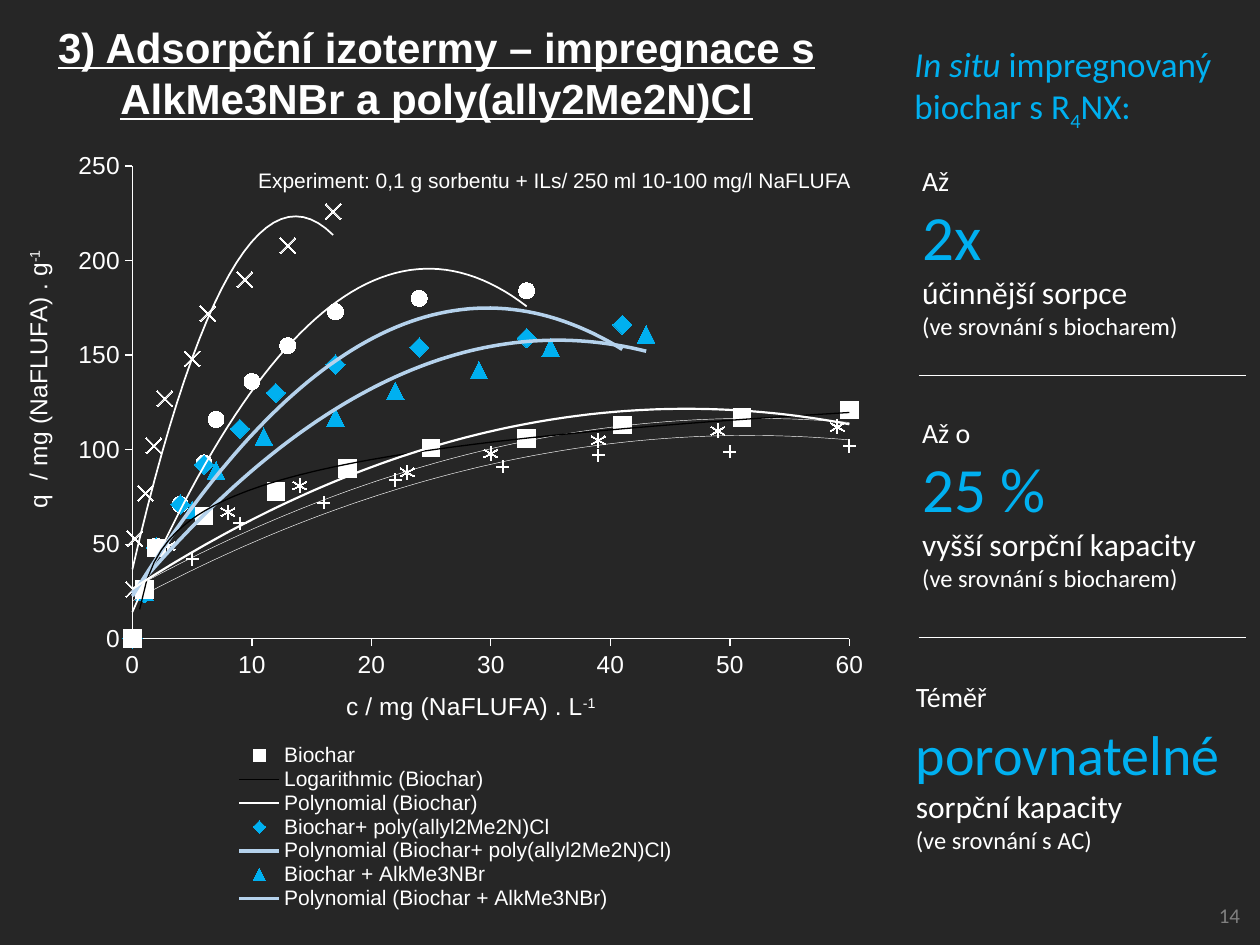
from lxml import etree
from pptx import Presentation, util as u
from pptx.chart.data import XyChartData
from pptx.dml.color import RGBColor
from pptx.enum import chart as ch, shapes, text
from pptx.oxml import parse_xml
from pptx.oxml.ns import nsdecls, qn

COLORS = {"back": "262626", "text": "FFFFFF", "accent": "00B0F0",
          "trend": "B5D2EC", "log": "000000", "number": "808080"}

# name (empty if not in the legend), x, y, marker, its size and colour,
# trendlines (type, colour, width)
SORBENTS = [
    ("Biochar", [0, 1, 2, 6, 12, 18, 25, 33, 41, 51, 60],
     [0, 26, 48, 65, 78, 90, 101, 106, 113, 117, 121],
     "SQUARE", 10, "text", [("log", "log", 0.75), ("poly", "text", 1.25)]),
    ("Biochar+ poly(allyl2Me2N)Cl", [0, 1, 2, 4, 6, 9, 12, 17, 24, 33, 41],
     [0, 24, 48, 71, 92, 111, 130, 145, 154, 159, 166],
     "DIAMOND", 11, "accent", [("poly", "trend", 2)]),
    ("Biochar + AlkMe3NBr", [0, 1, 2, 5, 7, 11, 17, 22, 29, 35, 43],
     [0, 25, 49, 68, 89, 107, 117, 131, 142, 154, 161],
     "TRIANGLE", 10, "accent", [("poly", "trend", 2)]),
    ("", [0, 0.1, 0.2, 1.1, 1.8, 2.7, 5, 6.3, 9.4, 13, 16.8],
     [0, 26, 53, 77, 102, 127, 148, 172, 190, 208, 226],
     "X", 9, "text", [("poly", "text", 1)]),
    ("", [0, 1, 2, 4, 6, 7, 10, 13, 17, 24, 33],
     [0, 24, 49, 71, 93, 116, 136, 155, 173, 180, 184],
     "CIRCLE", 9, "text", [("poly", "text", 1)]),
    ("", [0, 1, 3, 8, 14, 23, 30, 39, 49, 59, 71],
     [0, 28, 49, 67, 81, 88, 98, 105, 110, 112, 111],
     "STAR", 8, "text", [("poly", "text", 0.25)]),
    ("", [0, 1, 5, 9, 16, 22, 31, 39, 50, 60, 70],
     [0, 25, 42, 61, 72, 84, 91, 97, 99, 102, 104],
     "PLUS", 7, "text", [("poly", "text", 0.25)]),
]

# left, top, width, height, intro, highlight, its size, statement, comparison
FINDINGS = [
    (7.22, 1.25, 2.99, 1.51, "Až", "2x", 36, "účinnější sorpce", "(ve srovnání s biocharem)"),
    (7.22, 3.25, 2.81, 1.51, "Až o", "25 %", 36, "vyšší sorpční kapacity",
     "(ve srovnání s biocharem)"),
    (7.17, 5.34, 2.94, 1.51, "Téměř", "porovnatelné", 32, "sorpční kapacity",
     "(ve srovnání s AC)"),
]


def rgb(name):
    return RGBColor.from_string(COLORS[name])


def add_run(paragraph, words, size, color="text", font="Calibri", bold=False,
            italic=False, underline=False, baseline=0):
    run = paragraph.add_run()
    run.text = words
    run.font.size, run.font.name = u.Pt(size), font
    run.font.bold, run.font.italic, run.font.underline = bold, italic, underline
    run.font.color.rgb = rgb(color)
    if baseline:
        run.font._element.set("baseline", str(baseline * 1000))


def add_frame(slide, left, top, width, height):
    frame = slide.shapes.add_textbox(*map(u.Inches, (left, top, width, height))).text_frame
    frame.word_wrap = True
    return frame


def add_title(slide):
    title = slide.shapes.title
    title.left, title.top, title.width, title.height = map(u.Inches, (0.14, 0.12, 6.65, 0.91))
    frame = title.text_frame
    frame.auto_size = text.MSO_AUTO_SIZE.NONE
    frame.vertical_anchor = text.MSO_ANCHOR.TOP
    heading = frame.paragraphs[0]
    heading.alignment = text.PP_ALIGN.CENTER
    heading.line_spacing = u.Pt(29)
    add_run(heading, "3) Adsorpční izotermy – impregnace s AlkMe3NBr a poly(ally2Me2N)Cl",
            24, font="Arial", bold=True, underline=True)


def add_finding(slide, left, top, width, height, intro, highlight, size, statement, comparison):
    frame = add_frame(slide, left, top, width, height)
    lines = [(intro, 16, "text"), (highlight, size, "accent"),
             (statement, 18, "text"), (comparison, 14, "text")]
    for i, (words, points, color) in enumerate(lines):
        paragraph = frame.paragraphs[0] if i == 0 else frame.add_paragraph()
        if points == 32:
            paragraph.space_before = u.Pt(4)
        add_run(paragraph, words, points, color)


def add_divider(slide, top):
    divider = slide.shapes.add_connector(
        shapes.MSO_CONNECTOR.STRAIGHT, *map(u.Inches, (7.29, top, 9.89, top)))
    divider.line.color.rgb = rgb("text")
    divider.line.width = u.Pt(1)
    etree.SubElement(divider._element.spPr, qn("a:effectLst"))


def manual_layout(x, y, w=None, h=None, inner=False):
    target = '<c:layoutTarget val="inner"/>' if inner else ""
    size = f'<c:w val="{w}"/><c:h val="{h}"/>' if w else ""
    return parse_xml(
        f'<c:layout {nsdecls("c")}><c:manualLayout>{target}<c:xMode val="edge"/>'
        f'<c:yMode val="edge"/><c:x val="{x}"/><c:y val="{y}"/>{size}'
        '</c:manualLayout></c:layout>')


def place_after(anchor, layout):
    for old in anchor.getparent().findall(qn("c:layout")):
        old.getparent().remove(old)
    anchor.addnext(layout)


def trendline(kind, color, width):
    order = '<c:order val="2"/>' if kind == "poly" else ""
    return parse_xml(
        f'<c:trendline {nsdecls("c", "a")}><c:spPr><a:ln w="{u.Pt(width)}"><a:solidFill>'
        f'<a:srgbClr val="{COLORS[color]}"/></a:solidFill></a:ln></c:spPr>'
        f'<c:trendlineType val="{kind}"/>{order}<c:dispRSqr val="0"/>'
        '<c:dispEq val="0"/></c:trendline>')


def style_axis(axis, title, x, y, highest, step):
    axis.has_major_gridlines = False
    axis.minimum_scale, axis.maximum_scale, axis.major_unit = 0, highest, step
    axis.major_tick_mark = ch.XL_TICK_MARK.OUTSIDE
    axis.tick_labels.number_format = "0"
    axis.tick_labels.number_format_is_linked = False
    axis.format.line.color.rgb = rgb("text")
    axis.format.line.width = u.Pt(0.75)
    paragraph = axis.axis_title.text_frame.paragraphs[0]
    add_run(paragraph, title, 14, font="Arial")
    add_run(paragraph, "-1", 14, font="Arial", baseline=30)
    place_after(axis.axis_title._element.find(qn("c:tx")), manual_layout(x, y))


def style_series(series, marker, size, color, trends):
    series.smooth = False
    series.format.line.fill.background()
    series.marker.style = ch.XL_MARKER_STYLE[marker]
    series.marker.size = size
    series.marker.format.fill.solid()
    series.marker.format.fill.fore_color.rgb = rgb(color)
    series.marker.format.line.color.rgb = rgb(color)
    x_values = series._element.find(qn("c:xVal"))
    for trend in trends:
        x_values.addprevious(trendline(*trend))


def style_legend(chart):
    chart.has_legend = True
    legend = chart.legend
    legend.position = ch.XL_LEGEND_POSITION.BOTTOM
    legend.include_in_layout = False
    legend.font.size, legend.font.name = u.Pt(12), "Arial"
    legend.font.color.rgb = rgb("text")
    anchor = legend._element.find(qn("c:legendPos"))
    place_after(anchor, manual_layout(0.27, 0.77, 0.5, 0.21))
    # Only the first three sorbents and their trendlines are listed
    for index in range(14, 6, -1):
        anchor.addnext(parse_xml(f'<c:legendEntry {nsdecls("c")}><c:idx val="{index}"/>'
                                 '<c:delete val="1"/></c:legendEntry>'))


def add_isotherms(slide):
    data = XyChartData()
    for name, concentrations, uptakes, *_ in SORBENTS:
        points = data.add_series(name)
        for point in zip(concentrations, uptakes):
            points.add_data_point(*point)
    chart = slide.shapes.add_chart(ch.XL_CHART_TYPE.XY_SCATTER,
                                   *map(u.Inches, (0.01, 1, 6.94, 6.36)), data).chart
    chart.has_title = False
    chart.font.size, chart.font.name = u.Pt(14), "Arial"
    chart.font.color.rgb = rgb("text")
    plot = chart.plots[0]
    plot.vary_by_categories = False
    for series, sorbent in zip(plot.series, SORBENTS):
        style_series(series, *sorbent[3:])
    style_axis(chart.category_axis, "c / mg (NaFLUFA) . L", 0.39, 0.7, 60, 10)
    style_axis(chart.value_axis, "q  / mg (NaFLUFA) . g", 0.02, 0.15, 250, 50)
    style_legend(chart)
    area = chart._chartSpace.chart.plotArea
    for old in area.findall(qn("c:layout")):
        area.remove(old)
    area.insert(0, manual_layout(0.15, 0.05, 0.82, 0.59, inner=True))


def main():
    deck = Presentation()
    deck.slide_width, deck.slide_height = u.Inches(10), u.Inches(7.5)
    slide = deck.slides.add_slide(deck.slide_layouts[5])
    slide.background.fill.solid()
    slide.background.fill.fore_color.rgb = rgb("back")

    # Isotherm chart with its heading and conditions
    add_isotherms(slide)
    add_title(slide)
    conditions = add_frame(slide, 1.95, 1.28, 5.1, 0.46).paragraphs[0]
    add_run(conditions, "Experiment: 0,1 g sorbentu + ILs/ 250 ml 10-100 mg/l NaFLUFA",
            12, font="Arial")

    # Findings on the right
    subject = add_frame(slide, 7.16, 0.29, 2.86, 0.77).paragraphs[0]
    add_run(subject, "In situ ", 20, "accent", italic=True)
    add_run(subject, "impregnovaný biochar s R", 20, "accent")
    add_run(subject, "4", 20, "accent", baseline=-25)
    add_run(subject, "NX:", 20, "accent")
    for finding in FINDINGS:
        add_finding(slide, *finding)
    for top in (2.98, 5.06):
        add_divider(slide, top)

    # Slide number
    number = add_frame(slide, 7.69, 7.06, 2.25, 0.4)
    number.vertical_anchor = text.MSO_ANCHOR.MIDDLE
    number.paragraphs[0].alignment = text.PP_ALIGN.RIGHT
    add_run(number.paragraphs[0], "14", 12, "number")

    deck.save("out.pptx")


if __name__ == "__main__":
    main()
